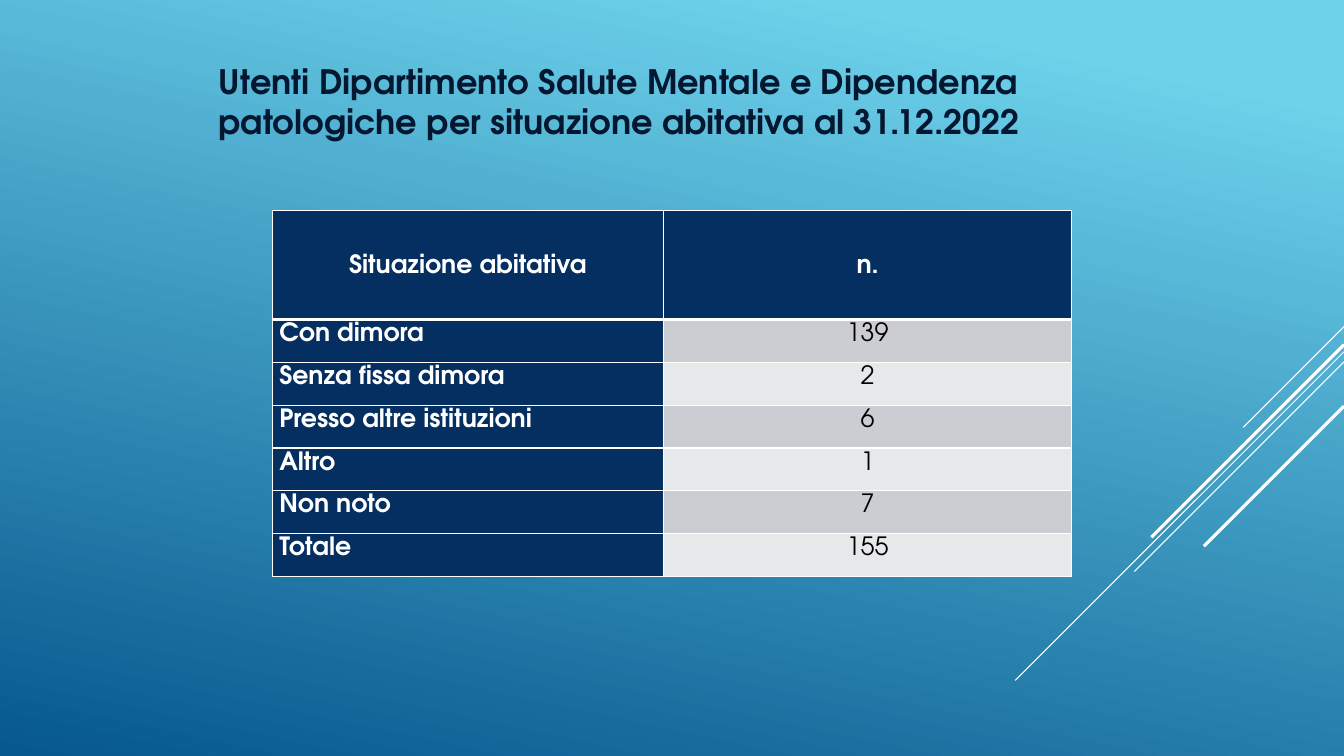
from lxml.etree import SubElement
from pptx import Presentation
from pptx.dml.color import RGBColor
from pptx.enum.shapes import MSO_CONNECTOR
from pptx.enum.text import MSO_ANCHOR, MSO_AUTO_SIZE, PP_ALIGN
from pptx.oxml import parse_xml
from pptx.oxml.ns import nsdecls, qn
from pptx.util import Inches, Pt

FONT = "TeX Gyre Adventor"
WHITE, BLACK, NAVY, INK = "FFFFFF", "000000", "052F61", "031730"
BANDS = ["CCCDD2", "E7E8EA"]
GRADIENT = [("6ED2EB", 0.1), ("06588E", 1)]
TITLE = ("Utenti Dipartimento Salute Mentale e Dipendenza patologiche "
         "per situazione abitativa al 31.12.2022")
ROWS = [
    ("Situazione abitativa", "n."),
    ("Con dimora", "139"),
    ("Senza fissa dimora", "2"),
    ("Presso altre istituzioni", "6"),
    ("Altro", "1"),
    ("Non noto", "7"),
    ("Totale", "155"),
]
COLUMN_WIDTHS = [3.88, 4.05]
TABLE_LEFT, TABLE_TOP, TABLE_HEIGHT, HEADER_HEIGHT = 2.7, 2.09, 3.63, 1.08
SLIDE_WIDTH, SLIDE_HEIGHT = 13.33, 7.5
DIAGONALS = [
    (3.24, 1, 0.75),
    (3.49, 3.26, 0.75),
    (3.59, 2.08, 0.75),
    (3.42, 1.91, 2.25),
    (4.03, 1.39, 2.25),
]


def color(value):
    return RGBColor.from_string(value)


def style_text(paragraph, size, value, bold):
    for run in paragraph.runs:
        run.font.name = FONT
        run.font.size = Pt(size)
        run.font.bold = bold
        run.font.color.rgb = color(value)


def add_diagonal(slide, top, reach, width):
    line = slide.shapes.add_connector(
        MSO_CONNECTOR.STRAIGHT, Inches(SLIDE_WIDTH), Inches(top),
        Inches(SLIDE_WIDTH - reach), Inches(top + reach))
    line.line.color.rgb = color(WHITE)
    line.line.width = Pt(width)
    SubElement(line._element.spPr, qn("a:effectLst"))


def set_borders(cell, top, bottom):
    widths = {"lnL": 1, "lnR": 1, "lnT": top, "lnB": bottom}
    properties = cell._tc.get_or_add_tcPr()
    for index, (side, width) in enumerate(widths.items()):
        properties.insert(index, parse_xml(
            f'<a:{side} {nsdecls("a")} w="{Pt(width)}"><a:solidFill>'
            f'<a:srgbClr val="{WHITE}"/></a:solidFill></a:{side}>'))


def format_cell(cell, text, row, column):
    header, label = row == 0, column == 0
    dark = header or label
    cell.text_frame.text = text
    cell.margin_left = cell.margin_right = Inches(0.07)
    cell.margin_top = cell.margin_bottom = 0
    cell.vertical_anchor = MSO_ANCHOR.MIDDLE if header else MSO_ANCHOR.TOP
    cell.fill.solid()
    cell.fill.fore_color.rgb = color(NAVY if dark else BANDS[(row - 1) % 2])
    paragraph = cell.text_frame.paragraphs[0]
    paragraph.alignment = PP_ALIGN.LEFT if label and not header else PP_ALIGN.CENTER
    paragraph.line_spacing = 1.15
    paragraph.space_after = Pt(10)
    style_text(paragraph, 18, WHITE if dark else BLACK, dark)
    set_borders(cell, 3 if row == 1 else 1, 3 if header else 1)


def add_table(slide):
    table = slide.shapes.add_table(
        len(ROWS), len(COLUMN_WIDTHS), Inches(TABLE_LEFT), Inches(TABLE_TOP),
        Inches(sum(COLUMN_WIDTHS)), Inches(TABLE_HEIGHT)).table
    for column, width in zip(table.columns, COLUMN_WIDTHS):
        column.width = Inches(width)
    body_height = (TABLE_HEIGHT - HEADER_HEIGHT) / (len(ROWS) - 1)
    for row, texts in enumerate(ROWS):
        table.rows[row].height = Inches(body_height if row else HEADER_HEIGHT)
        for column, text in enumerate(texts):
            format_cell(table.cell(row, column), text, row, column)


def set_title(slide):
    title = slide.shapes.title
    title.left, title.top = Inches(2.07), Inches(0.55)
    title.width, title.height = Inches(9.19), Inches(0.91)
    frame = title.text_frame
    frame.text = TITLE
    frame.word_wrap = True
    frame.auto_size = MSO_AUTO_SIZE.SHAPE_TO_FIT_TEXT
    frame.vertical_anchor = MSO_ANCHOR.TOP
    paragraph = frame.paragraphs[0]
    paragraph.alignment = PP_ALIGN.LEFT
    style_text(paragraph, 24, INK, True)


def set_background(slide):
    fill = slide.background.fill
    fill.gradient()
    fill.gradient_angle = 360 - 102
    for stop, (value, position) in zip(fill.gradient_stops, GRADIENT):
        stop.color.rgb = color(value)
        stop.position = position


def main():
    presentation = Presentation()
    presentation.slide_width = Inches(SLIDE_WIDTH)
    presentation.slide_height = Inches(SLIDE_HEIGHT)
    slide = presentation.slides.add_slide(presentation.slide_layouts[5])
    set_background(slide)
    for top, reach, width in DIAGONALS:
        add_diagonal(slide, top, reach, width)
    add_table(slide)
    set_title(slide)
    presentation.save("out.pptx")


if __name__ == "__main__":
    main()
